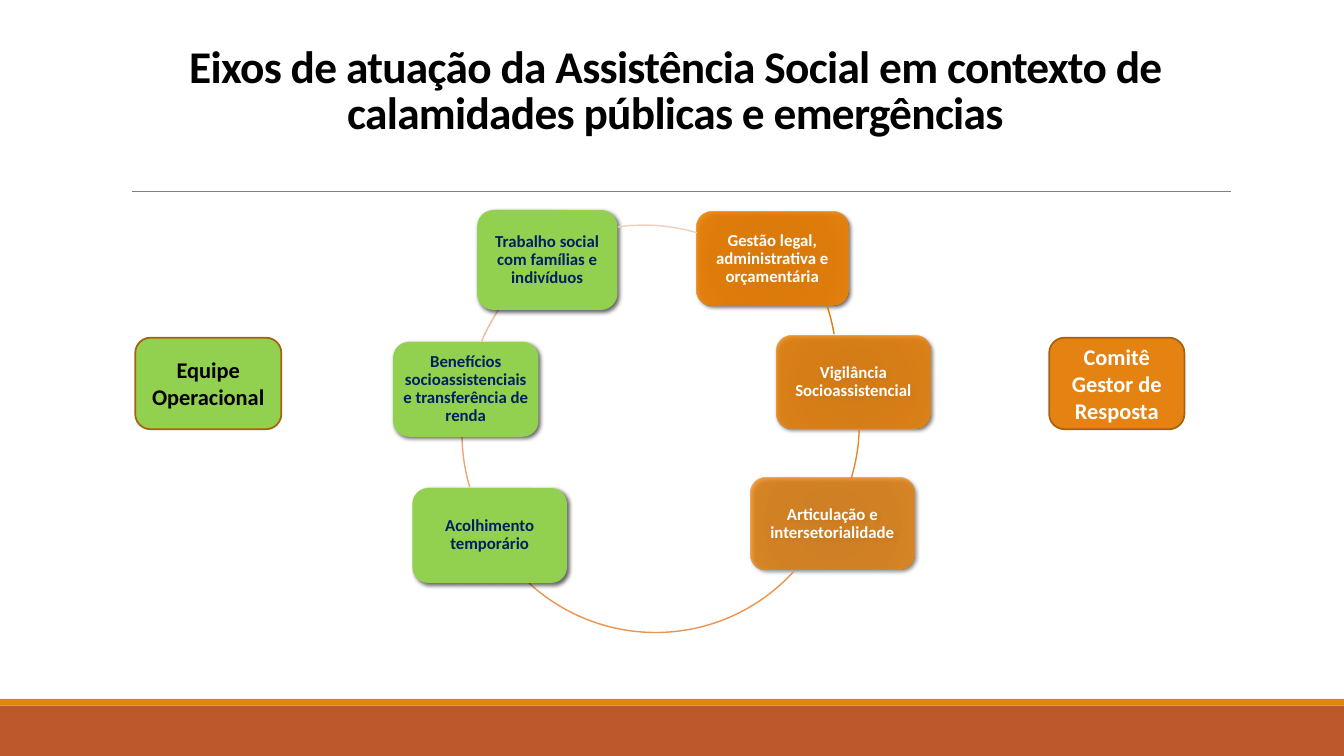
from lxml import etree
from pptx import Presentation, util as u
from pptx.dml.color import RGBColor
from pptx.enum import shapes, text
from pptx.oxml import parse_xml
from pptx.oxml.ns import nsdecls, qn

BLACK = RGBColor(0x00, 0x00, 0x00)
WHITE = RGBColor(0xFF, 0xFF, 0xFF)
NAVY = RGBColor(0x00, 0x20, 0x60)
GREEN = RGBColor(0x92, 0xD0, 0x50)
ORANGE = RGBColor(0xE4, 0x83, 0x12)
BROWN = RGBColor(0xA9, 0x61, 0x0D)
RUST = RGBColor(0xBD, 0x58, 0x2C)
GRAY = RGBColor(0x80, 0x80, 0x80)
GLOW = [
    (0, RGBColor(0xE5, 0x7B, 0x00)),
    (34, RGBColor(0xE8, 0x7D, 0x00)),
    (70, RGBColor(0xEB, 0x7E, 0x00)),
    (100, RGBColor(0xEF, 0x84, 0x07)),
]

COLUMNS, ROWS = 160, 90
RING = 44.5
AXES = [
    ("Gestão legal, administrativa e orçamentária", (82.9, 25.2, 18.1, 11.2), 90),
    ("Vigilância Socioassistencial", (92.4, 40, 18.4, 11), 82),
    ("Articulação e intersetorialidade", (89.4, 56.9, 19.4, 10.9), 74),
    ("Acolhimento temporário", (49.1, 58.1, 18.4, 11.3), None),
    ("Benefícios socioassistenciais e transferência de renda", (46.8, 40.7, 17.3, 11.3), None),
    ("Trabalho social com famílias e indivíduos", (56.8, 25, 16.7, 11.9), None),
]
ARCS = [
    (55.1, 21.2, 341.6, 350.5, RGBColor(0xDA, 0x7D, 0x11)),
    (57.8, 28.2, 1.4, 16.8, RGBColor(0xE9, 0x88, 0x29)),
    (55.8, 30.8, 42, 132.6, RGBColor(0xE9, 0x95, 0x50)),
    (55, 29.4, 163.5, 179.2, RGBColor(0xEB, 0xA6, 0x76)),
    (55.6, 27, 202.8, 213.6, RGBColor(0xEE, 0xB9, 0x9A)),
    (54.4, 26.8, 262, 286.4, RGBColor(0xF2, 0xCE, 0xBD)),
]
TEAMS = [
    ("Equipe Operacional", (16.1, 40.2, 17.4, 10.9), GREEN, BLACK),
    ("Comitê Gestor de Resposta", (124.9, 40.2, 16.1, 10.9), ORANGE, WHITE),
]


class Slide:
    font = "Calibri"

    def __init__(self, deck):
        self.page = deck.slides.add_slide(deck.slide_layouts[6])
        self.column = deck.slide_width / COLUMNS
        self.row = deck.slide_height / ROWS

    def place(self, across, down):
        return round(across * self.column), round(down * self.row)

    def shape(self, kind, area, fill=None, line=None, weight=1):
        shape = self.page.shapes.add_shape(kind, *self.place(*area[:2]), *self.place(*area[2:]))
        shape.shadow.inherit = False
        if fill is None:
            shape.fill.background()
        else:
            shape.fill.solid()
            shape.fill.fore_color.rgb = fill
        if line is None:
            shape.line.fill.background()
        else:
            shape.line.color.rgb = line
            shape.line.width = u.Pt(weight)
        return shape

    def label(self, box, words, size, color, spacing=1, anchor=text.MSO_ANCHOR.MIDDLE, **margins):
        frame = box.text_frame
        layout = {"word_wrap": True, "vertical_anchor": anchor}
        layout.update({f"margin_{side}": u.Inches(gap) for side, gap in margins.items()})
        para = frame.paragraphs[0]
        span = para.add_run()
        span.text = words
        formats = [
            (frame, layout),
            (para, {"alignment": text.PP_ALIGN.CENTER, "line_spacing": spacing}),
            (span.font, {"name": self.font, "size": u.Pt(size), "bold": True}),
        ]
        for target, values in formats:
            for name, value in values.items():
                setattr(target, name, value)
        span.font.color.rgb = color
        return span

    def title(self, words, area):
        box = self.page.shapes.add_textbox(*self.place(*area[:2]), *self.place(*area[2:]))
        span = self.label(box, words, 32.4, BLACK, 0.85, text.MSO_ANCHOR.BOTTOM, bottom=0.52)
        span.font._element.set("spc", "-50")

    def rule(self, left, right, down):
        line = self.page.shapes.add_connector(
            shapes.MSO_CONNECTOR.STRAIGHT, *self.place(left, down), *self.place(right, down))
        line.line.color.rgb = GRAY
        line.line.width = u.Pt(0.5)
        etree.SubElement(line._element.spPr, qn("a:effectLst"))

    def arc(self, left, top, start, end, color):
        arc = self.shape(shapes.MSO_SHAPE.ARC, (left, top, RING, RING), line=color)
        for index, angle in enumerate((start, end)):
            arc.adjustments[index] = angle * 0.6

    def axis(self, words, area, opacity):
        box = self.shape(shapes.MSO_SHAPE.ROUNDED_RECTANGLE, area, GREEN)
        properties = box._element.spPr
        if opacity:
            stops = "".join(
                f'<a:gs pos="{stop * 1000}"><a:srgbClr val="{color}">'
                f'<a:alpha val="{opacity * 1000}"/></a:srgbClr></a:gs>'
                for stop, color in GLOW)
            glow = parse_xml(
                f'<a:gradFill {nsdecls("a")} rotWithShape="1"><a:gsLst>{stops}</a:gsLst>'
                '<a:path path="circle"><a:fillToRect l="100000" t="100000" r="100000" b="100000"/>'
                '</a:path></a:gradFill>')
            properties.replace(properties.find(qn("a:solidFill")), glow)
        properties.find(qn("a:effectLst")).append(parse_xml(
            f'<a:outerShdw {nsdecls("a")} blurRad="{u.Pt(3)}" dist="{u.Pt(2)}" dir="2700000" '
            f'algn="br" rotWithShape="0"><a:srgbClr val="{BLACK}"><a:alpha val="60000"/>'
            '</a:srgbClr></a:outerShdw>'))
        sides = dict.fromkeys(("left", "top", "right", "bottom"), 0.05)
        self.label(box, words, 12, WHITE if opacity else NAVY, 0.9, **sides)

    def team(self, words, area, fill, color):
        box = self.shape(shapes.MSO_SHAPE.FLOWCHART_ALTERNATE_PROCESS, area, fill, BROWN, 1.25)
        self.label(box, words, 16, color)


def main():
    deck = Presentation()
    deck.slide_width, deck.slide_height = u.Inches(13.33), u.Inches(7.5)
    slide = Slide(deck)
    slide.shape(shapes.MSO_SHAPE.RECTANGLE, (0, 84, COLUMNS, 6), RUST)
    slide.shape(shapes.MSO_SHAPE.RECTANGLE, (0, 83.2, COLUMNS, 0.8), ORANGE)
    slide.rule(15.7, 146.5, 22.8)
    slide.title("Eixos de atuação da Assistência Social em contexto de "
                "calamidades públicas e emergências", (14.4, 3.7, 132, 19.1))
    for axis, arc in zip(AXES, ARCS):
        slide.axis(*axis)
        slide.arc(*arc)
    for team in TEAMS:
        slide.team(*team)
    deck.save("out.pptx")


if __name__ == "__main__":
    main()
